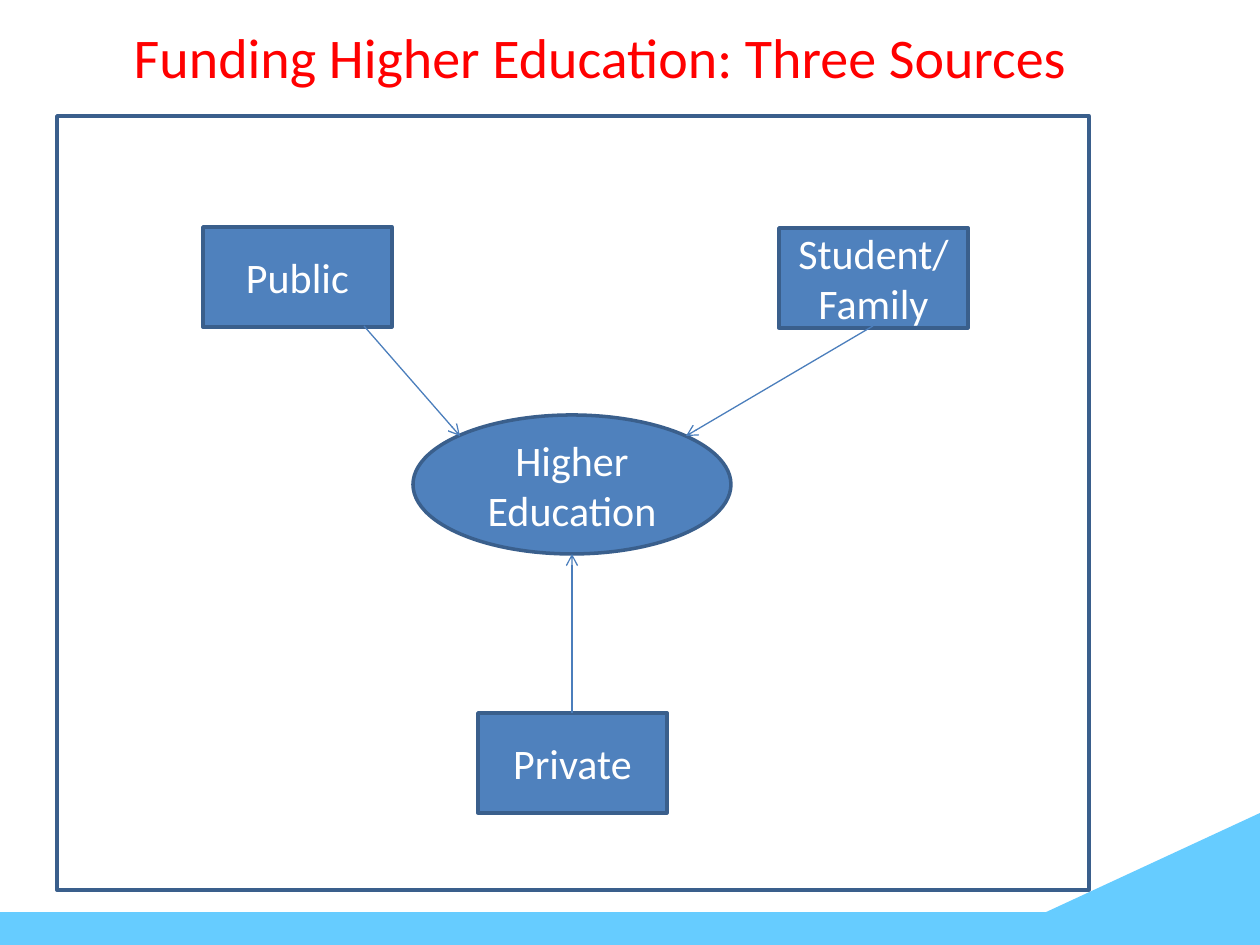
"""Build a slide showing the three funding sources of higher education."""
from typing import NamedTuple

from lxml.etree import SubElement
from pptx import Presentation
from pptx.dml.color import RGBColor
from pptx.enum.shapes import MSO_CONNECTOR, MSO_SHAPE
from pptx.enum.text import MSO_ANCHOR, MSO_AUTO_SIZE, PP_ALIGN
from pptx.oxml.ns import qn
from pptx.util import Emu, Pt

SCALE = 914400 / 126
FONT = "Calibri"
COLORS = {
    "fill": "4F81BD",
    "edge": "3A5F8C",
    "arrow": "4B7EBC",
    "wave": "66CCFF",
    "title": "FF0000",
    "text": "FFFFFF",
}


class Box(NamedTuple):
    kind: MSO_SHAPE
    left: int
    top: int
    width: int
    height: int
    fill: str | None = "fill"
    edge: str | None = "edge"
    text: str = ""
    flip: bool = False


class Arrow(NamedTuple):
    x1: int
    y1: int
    x2: int
    y2: int


def source(text: str, left: int, top: int) -> Box:
    return Box(MSO_SHAPE.RECTANGLE, left, top, 189, 100, text=text)


NODES = [
    Box(MSO_SHAPE.OVAL, 413, 415, 318, 139, text="Higher Education"),
    source("Public", 203, 227),
    source("Private", 478, 713),
    source("Student/ Family", 779, 228),
]
ARROWS = [
    Arrow(364, 326, 460, 436),
    Arrow(873, 326, 686, 436),
    Arrow(572, 713, 572, 554),
]
DECOR = [
    Box(MSO_SHAPE.RECTANGLE, 0, 912, 1260, 33, "wave", None),
    Box(MSO_SHAPE.RIGHT_TRIANGLE, 975, 813, 285, 132, "wave", None, flip=True),
    Box(MSO_SHAPE.RECTANGLE, 57, 116, 1032, 774, None),
]


def px(value: int) -> Emu:
    return Emu(round(value * SCALE))


def color(name: str) -> RGBColor:
    return RGBColor.from_string(COLORS[name])


def write(frame, text: str, size: int, tint: str) -> None:
    frame.text = text
    frame.vertical_anchor = MSO_ANCHOR.MIDDLE
    para = frame.paragraphs[0]
    para.alignment = PP_ALIGN.CENTER
    para.font.name = FONT
    para.font.size = Pt(size)
    para.font.color.rgb = color(tint)


def draw_title(shape) -> None:
    shape.left, shape.top, shape.width, shape.height = map(px, (116, 16, 969, 81))
    write(shape.text_frame, "Funding Higher Education: Three Sources", 32, "title")
    shape.text_frame.word_wrap = False
    shape.text_frame.auto_size = MSO_AUTO_SIZE.SHAPE_TO_FIT_TEXT


def draw_box(slide, box: Box) -> None:
    shape = slide.shapes.add_shape(
        box.kind, px(box.left), px(box.top), px(box.width), px(box.height)
    )
    shape.shadow.inherit = False
    if box.fill:
        shape.fill.solid()
        shape.fill.fore_color.rgb = color(box.fill)
    else:
        shape.fill.background()
    if box.edge:
        shape.line.color.rgb = color(box.edge)
        shape.line.width = Pt(2)
    else:
        shape.line.fill.background()
    if box.flip:
        shape.element.spPr.find(qn("a:xfrm")).set("flipH", "1")
    if box.text:
        write(shape.text_frame, box.text, 24, "text")


def draw_arrow(slide, arrow: Arrow) -> None:
    link = slide.shapes.add_connector(MSO_CONNECTOR.STRAIGHT, *map(px, arrow))
    link.line.color.rgb = color("arrow")
    link.line.width = Pt(0.75)
    props = link.element.spPr
    SubElement(props.find(qn("a:ln")), qn("a:tailEnd"), type="arrow")
    SubElement(props, qn("a:effectLst"))


def main() -> None:
    deck = Presentation()
    deck.slide_width, deck.slide_height = px(1260), px(945)
    slide = deck.slides.add_slide(deck.slide_layouts.get_by_name("Title Only"))
    for box in NODES:
        draw_box(slide, box)
    draw_title(slide.shapes.title)
    for arrow in ARROWS:
        draw_arrow(slide, arrow)
    for box in DECOR:
        draw_box(slide, box)
    deck.save("out.pptx")


if __name__ == "__main__":
    main()
